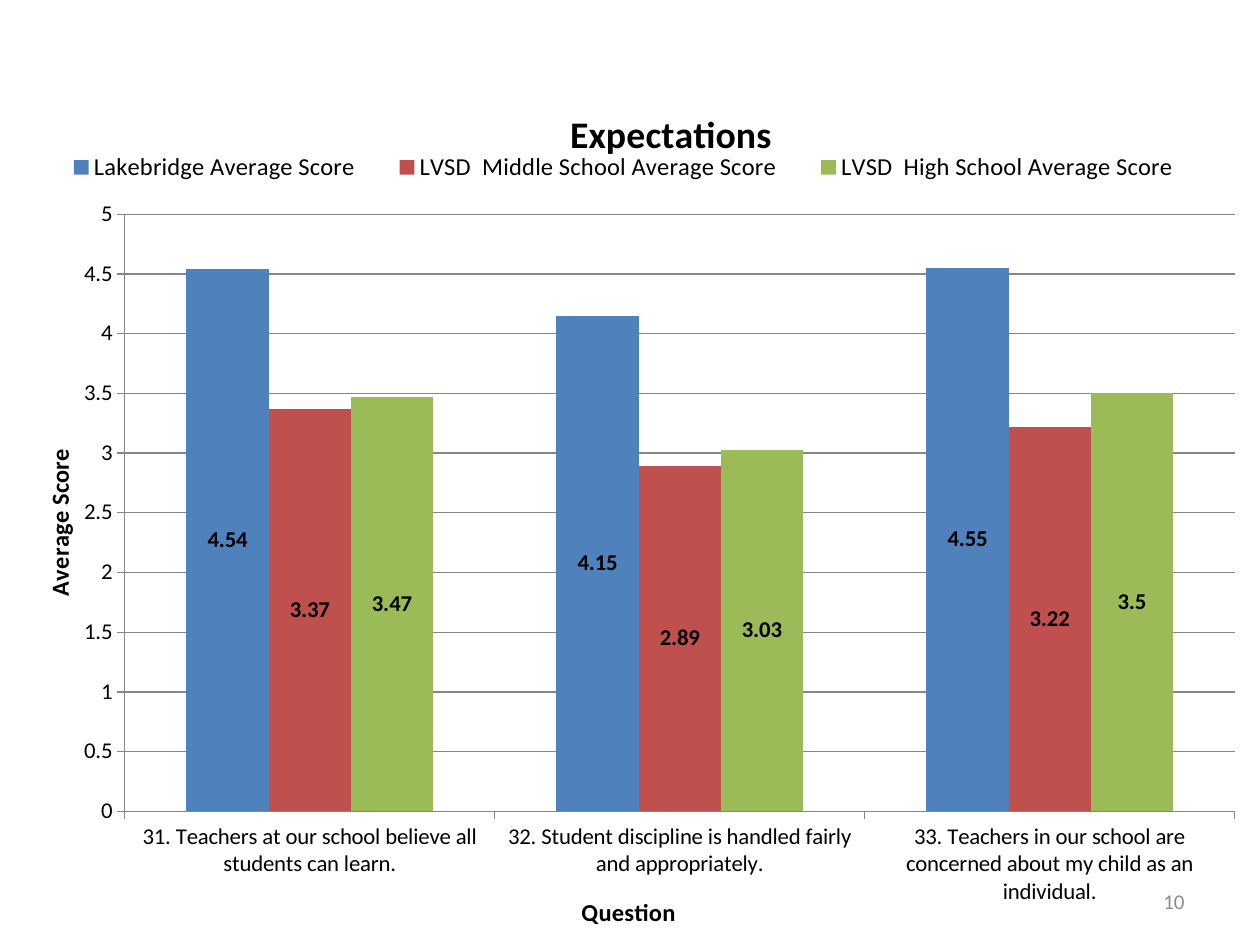
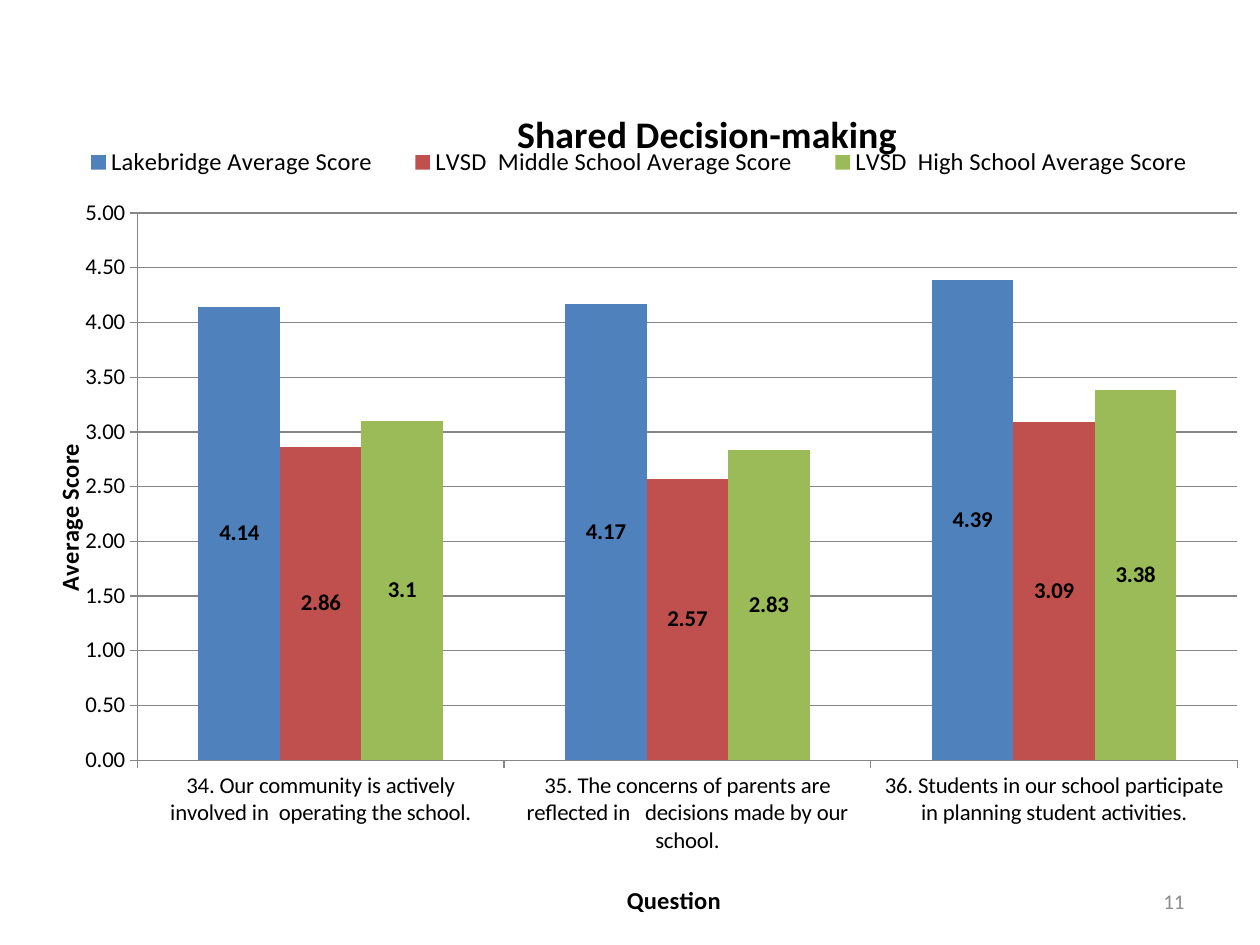
from dataclasses import dataclass

from pptx import Presentation
from pptx.chart.data import CategoryChartData
from pptx.dml.color import RGBColor
from pptx.enum.chart import XL_CHART_TYPE as ChartType
from pptx.enum.chart import XL_LABEL_POSITION as LabelPosition
from pptx.enum.chart import XL_LEGEND_POSITION as LegendPosition
from pptx.enum.chart import XL_TICK_MARK as TickMark
from pptx.enum.text import MSO_ANCHOR as Anchor
from pptx.enum.text import PP_ALIGN as Align
from pptx.oxml import parse_xml
from pptx.oxml.ns import nsdecls
from pptx.util import Inches, Pt


@dataclass(frozen=True)
class Theme:
    font: str = "Calibri"
    text: str = "000000"
    line: str = "868686"
    page_number: str = "8C8C8C"
    series: tuple = ("4F81BD", "C0504D", "9BBB59")
    title_size: float = 21.6
    heading_size: float = 14
    label_size: float = 13
    number_size: float = 12
    base_size: float = 10


@dataclass(frozen=True)
class Survey:
    title: str
    number: str
    questions: tuple
    scores: tuple
    frame: tuple
    plot: tuple
    legend: tuple
    title_at: tuple
    question_at: tuple
    score_at: tuple
    axis_format: str = "General"
    first_label_format: str = "General"


THEME = Theme()
SCHOOLS = (
    "Lakebridge Average Score",
    "LVSD  Middle School Average Score",
    "LVSD  High School Average Score",
)
SURVEYS = (
    Survey(
        title="Expectations",
        number="10",
        questions=(
            "31. Teachers at our school believe all students can learn.",
            "32. Student discipline is handled fairly and appropriately.",
            "33. Teachers in our school are concerned about my child as an individual.",
        ),
        scores=((4.54, 4.15, 4.55), (3.37, 2.89, 3.22), (3.47, 3.03, 3.5)),
        frame=(0.08, 0.57, 9.83, 6.85),
        plot=(0.99, 1.71, 8.81, 4.78),
        legend=(0.3, 1.17, 9.3, 0.33),
        title_at=(4.47, 0.8),
        question_at=(4.58, 7.12),
        score_at=(0.3, 3.56),
    ),
    Survey(
        title="Shared Decision-making",
        number="11",
        questions=(
            "34. Our community is actively involved in  operating the school.",
            "35. The concerns of parents are reflected in   decisions made by our school.",
            "36. Students in our school participate in planning student activities.",
        ),
        scores=((4.14, 4.17, 4.39), (2.86, 2.57, 3.09), (3.1, 2.83, 3.38)),
        frame=(0.17, 0.57, 9.75, 6.76),
        plot=(1.09, 1.7, 8.73, 4.38),
        legend=(0.45, 1.13, 9.25, 0.33),
        title_at=(4.05, 0.8),
        question_at=(4.94, 7.03),
        score_at=(0.38, 3.52),
        axis_format="0.00",
        first_label_format="0.00",
    ),
)


def style_font(font, size, color=THEME.text, bold=False):
    font.name = THEME.font
    font.size = Pt(size)
    font.bold = bold
    font.color.rgb = RGBColor.from_string(color)


def write_text(text_frame, text, align=None, **font_format):
    para = text_frame.paragraphs[0]
    para.alignment = align
    span = para.add_run()
    span.text = text
    style_font(span.font, **font_format)


def place(chart, query, frame, area, after=None, inner=False):
    """Position a chart part from its place on the page in inches."""
    left, top, width, height = frame
    values = [(area[0] - left) / width, (area[1] - top) / height]
    if len(area) == 4:
        values += [area[2] / width, area[3] / height]
    keys = "xywh"[:len(values)]
    target = '<c:layoutTarget val="inner"/>' if inner else ""
    modes = "".join(f'<c:{key}Mode val="edge"/>' for key in keys[:2])
    sizes = "".join(f'<c:{key} val="{value:.4f}"/>' for key, value in zip(keys, values))
    layout = parse_xml(
        f'<c:layout {nsdecls("c")}><c:manualLayout>{target}{modes}{sizes}'
        "</c:manualLayout></c:layout>"
    )
    element = chart.element.xpath(query)[0]
    for previous in element.xpath("c:layout"):
        element.remove(previous)
    if after:
        element.xpath(after)[0].addnext(layout)
    else:
        element.insert(0, layout)


def style_axis(axis, title):
    write_text(axis.axis_title.text_frame, title, size=THEME.heading_size, bold=True)
    style_font(axis.tick_labels.font, THEME.label_size)
    axis.major_tick_mark = TickMark.OUTSIDE
    axis.minor_tick_mark = TickMark.NONE
    style_line(axis.format.line)


def style_line(line):
    line.color.rgb = RGBColor.from_string(THEME.line)
    line.width = Pt(0.75)


def style_value_axis(axis, number_format):
    style_axis(axis, "Average Score")
    axis.minimum_scale, axis.maximum_scale, axis.major_unit = 0, 5, 0.5
    axis.has_major_gridlines = True
    style_line(axis.major_gridlines.format.line)
    axis.tick_labels.number_format = number_format
    axis.tick_labels.number_format_is_linked = False


def style_series(series, color, number_format):
    series.format.fill.solid()
    series.format.fill.fore_color.rgb = RGBColor.from_string(color)
    series.invert_if_negative = False
    labels = series.data_labels
    labels.show_value = True
    labels.position = LabelPosition.CENTER
    labels.number_format = number_format
    labels.number_format_is_linked = False
    style_font(labels.font, THEME.label_size, bold=True)


def add_score_chart(page, survey):
    data = CategoryChartData()
    data.categories = survey.questions
    for school, scores in zip(SCHOOLS, survey.scores):
        data.add_series(school, scores)
    frame = survey.frame
    chart = page.shapes.add_chart(
        ChartType.COLUMN_CLUSTERED, *map(Inches, frame), data
    ).chart
    style_font(chart.font, THEME.base_size)
    chart.has_title = True
    write_text(chart.chart_title.text_frame, survey.title, size=THEME.title_size, bold=True)
    chart.has_legend = True
    chart.legend.position = LegendPosition.TOP
    chart.legend.include_in_layout = False
    style_font(chart.legend.font, THEME.heading_size)
    style_axis(chart.category_axis, "Question")
    style_value_axis(chart.value_axis, survey.axis_format)

    columns = chart.plots[0]
    columns.gap_width = 150
    columns.overlap = 0
    columns.vary_by_categories = False
    formats = (survey.first_label_format, "General", "General")
    for series, color, number_format in zip(columns.series, THEME.series, formats):
        style_series(series, color, number_format)

    plot = "c:chart/c:plotArea"
    place(chart, plot, frame, survey.plot, inner=True)
    place(chart, "c:chart/c:legend", frame, survey.legend, after="c:legendPos")
    for query, spot in (
        ("c:chart/c:title", survey.title_at),
        (f"{plot}/c:catAx/c:title", survey.question_at),
        (f"{plot}/c:valAx/c:title", survey.score_at),
    ):
        place(chart, query, frame, spot, after="c:tx")


def add_page_number(page, number):
    box = page.shapes.add_textbox(Inches(7.17), Inches(6.95), Inches(2.33), Inches(0.4))
    box.text_frame.word_wrap = True
    box.text_frame.vertical_anchor = Anchor.MIDDLE
    write_text(
        box.text_frame, number, align=Align.RIGHT,
        size=THEME.number_size, color=THEME.page_number,
    )


def main():
    deck = Presentation()
    deck.slide_width, deck.slide_height = Inches(10), Inches(7.5)
    blank_layout = deck.slide_layouts[6]
    for survey in SURVEYS:
        page = deck.slides.add_slide(blank_layout)
        add_score_chart(page, survey)
        add_page_number(page, survey.number)
    deck.save("out.pptx")


if __name__ == "__main__":
    main()
